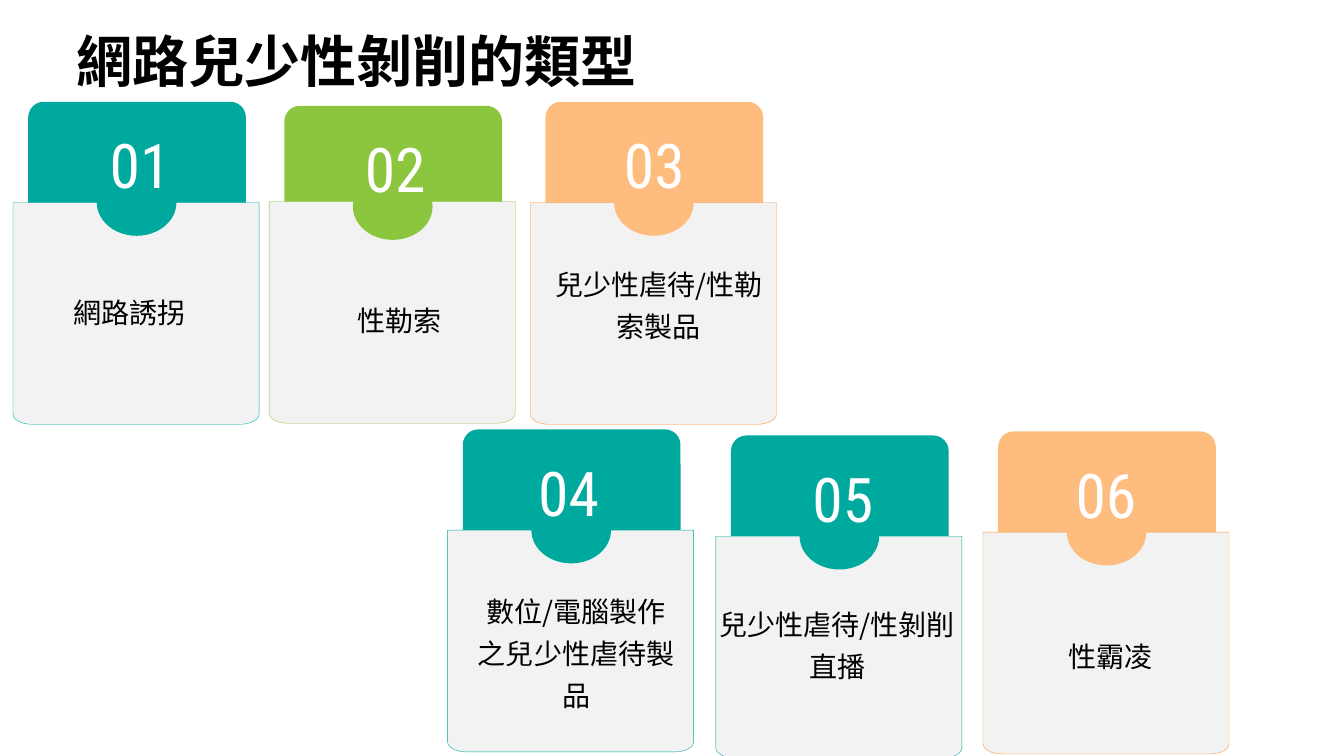
from dataclasses import dataclass
from math import cos, pi, sin
from typing import Any

from lxml.etree import SubElement
from pptx import Presentation
from pptx.dml.color import RGBColor
from pptx.enum.shapes import MSO_SHAPE
from pptx.enum.text import MSO_ANCHOR, MSO_AUTO_SIZE, PP_ALIGN
from pptx.oxml.ns import qn
from pptx.util import Inches, Pt

TEAL = RGBColor(0x00, 0xA9, 0x9D)
GREEN = RGBColor(0x8C, 0xC6, 0x3F)
PEACH = RGBColor(0xFF, 0xBC, 0x7F)
ORANGE = RGBColor(0xFF, 0x8F, 0x29)
GREY = RGBColor(0xF2, 0xF2, 0xF2)
BLACK = RGBColor(0x00, 0x00, 0x00)
WHITE = RGBColor(0xFF, 0xFF, 0xFF)

HAN = "Noto Sans CJK SC"
ROBOTO = "Roboto Condensed"
HEAD_FONT = {"size": Pt(40), "name": HAN, "bold": True}
NUMBER_FONT = {"size": Pt(44), "name": ROBOTO}
LABEL_FONT = {"size": Pt(20), "name": HAN}
CENTER = {"alignment": PP_ALIGN.CENTER}
LABEL_LINES = {"alignment": PP_ALIGN.CENTER, "line_spacing": Pt(30)}
TIGHT = {"margin_left": 0, "margin_top": 0, "margin_right": 0,
         "margin_bottom": 0, "vertical_anchor": MSO_ANCHOR.MIDDLE}

PANEL_WIDTH, PANEL_HEIGHT = 2.44, 2.2
CURVE_WIDTH, CURVE_HEIGHT, STEPS = 0.19, 0.1, 8


@dataclass
class Box:
    left: float
    top: float
    width: float
    height: float

    def frame(self) -> list[int]:
        return [Inches(v) for v in (self.left, self.top, self.width, self.height)]


@dataclass
class Card:
    left: float
    top: float
    panel: float
    fill: RGBColor
    line: RGBColor
    number: str
    middle: float
    text: str
    label: Box


CARDS = [
    Card(0.13, 1.01, 2.01, TEAL, TEAL, "01", 1.39, "網路誘拐", Box(-0.03, 2.8, 2.63, 0.5)),
    Card(2.67, 1.05, 2.0, GREEN, GREEN, "02", 3.92, "性勒索", Box(2.93, 2.88, 2.06, 0.5)),
    Card(5.26, 1.01, 2.01, PEACH, ORANGE, "03", 6.49, "兒少性虐待/性勒索製品",
         Box(5.37, 2.52, 2.33, 0.9)),
    Card(4.44, 4.26, 5.26, TEAL, TEAL, "04", 5.64, "數位/電腦製作之兒少性虐待製品",
         Box(4.6, 5.77, 2.23, 1.34)),
    Card(7.1, 4.32, 5.32, TEAL, TEAL, "05", 8.36, "兒少性虐待/性剝削直播",
         Box(6.99, 5.89, 2.63, 0.92)),
    Card(9.75, 4.28, 5.28, PEACH, ORANGE, "06", 10.97, "性霸凌", Box(9.85, 6.21, 2.33, 0.5)),
]


def apply(target: Any, values: dict[str, Any]) -> None:
    for name, value in values.items():
        setattr(target, name, value)


def add_text(shapes: Any, box: Box, text: str, font: dict[str, Any], color: RGBColor,
             lines: dict[str, Any], margins: dict[str, Any]) -> None:
    frame = shapes.add_textbox(*box.frame()).text_frame
    apply(frame, {"word_wrap": True, "auto_size": MSO_AUTO_SIZE.SHAPE_TO_FIT_TEXT, **margins})
    apply(frame.paragraphs[0], lines)
    run = frame.paragraphs[0].add_run()
    run.text = text
    apply(run.font, font)
    run.font.color.rgb = color
    SubElement(run.font._element, qn("a:ea"), typeface=font["name"])


def paint(shape: Any, color: RGBColor) -> None:
    shape.shadow.inherit = False
    shape.fill.solid()
    shape.fill.fore_color.rgb = color


def add_solid(shapes: Any, kind: MSO_SHAPE, box: Box, color: RGBColor) -> Any:
    shape = shapes.add_shape(kind, *box.frame())
    paint(shape, color)
    shape.line.fill.background()
    return shape


def add_panel(shapes: Any, card: Card) -> None:
    left, top = card.left, card.panel
    right, base = left + PANEL_WIDTH, top + PANEL_HEIGHT
    points = [(right, top)]
    for middle, start in ((right - CURVE_WIDTH, 0), (left + CURVE_WIDTH, pi / 2)):
        for step in range(STEPS + 1):
            angle = start + pi / 2 * step / STEPS
            points.append((middle + CURVE_WIDTH * cos(angle),
                           base - CURVE_HEIGHT + CURVE_HEIGHT * sin(angle)))
    builder = shapes.build_freeform(Inches(left), Inches(top))
    builder.add_line_segments([(Inches(x), Inches(y)) for x, y in points], close=True)
    panel = builder.convert_to_shape()
    paint(panel, GREY)
    panel.line.color.rgb = card.line
    panel.line.width = Pt(0.25)


def add_card(slide: Any, card: Card) -> None:
    shapes = slide.shapes.add_group_shape().shapes
    tab = Box(card.left + 0.15, card.top, 2.16, 1.66)
    add_solid(shapes, MSO_SHAPE.ROUNDED_RECTANGLE, tab, card.fill).adjustments[0] = 0.093
    add_panel(shapes, card)
    knob = Box(card.left + 0.83, card.top + 0.67, 0.79, 0.66)
    add_solid(shapes, MSO_SHAPE.OVAL, knob, card.fill)
    number = Box(card.middle - 0.6, card.top + 0.2, 1.2, 0.84)
    add_text(shapes, number, card.number, NUMBER_FONT, WHITE, CENTER, {})
    add_text(shapes, card.label, card.text, LABEL_FONT, BLACK, LABEL_LINES, {})


def main() -> None:
    deck = Presentation()
    apply(deck, {"slide_width": Inches(13.33), "slide_height": Inches(7.5)})
    slide = deck.slides.add_slide(deck.slide_layouts[6])
    add_text(slide.shapes, Box(0.76, 0.26, 7.31, 0.67), "網路兒少性剝削的類型",
             HEAD_FONT, BLACK, {}, TIGHT)
    for card in CARDS:
        add_card(slide, card)
    deck.save("out.pptx")


if __name__ == "__main__":
    main()
